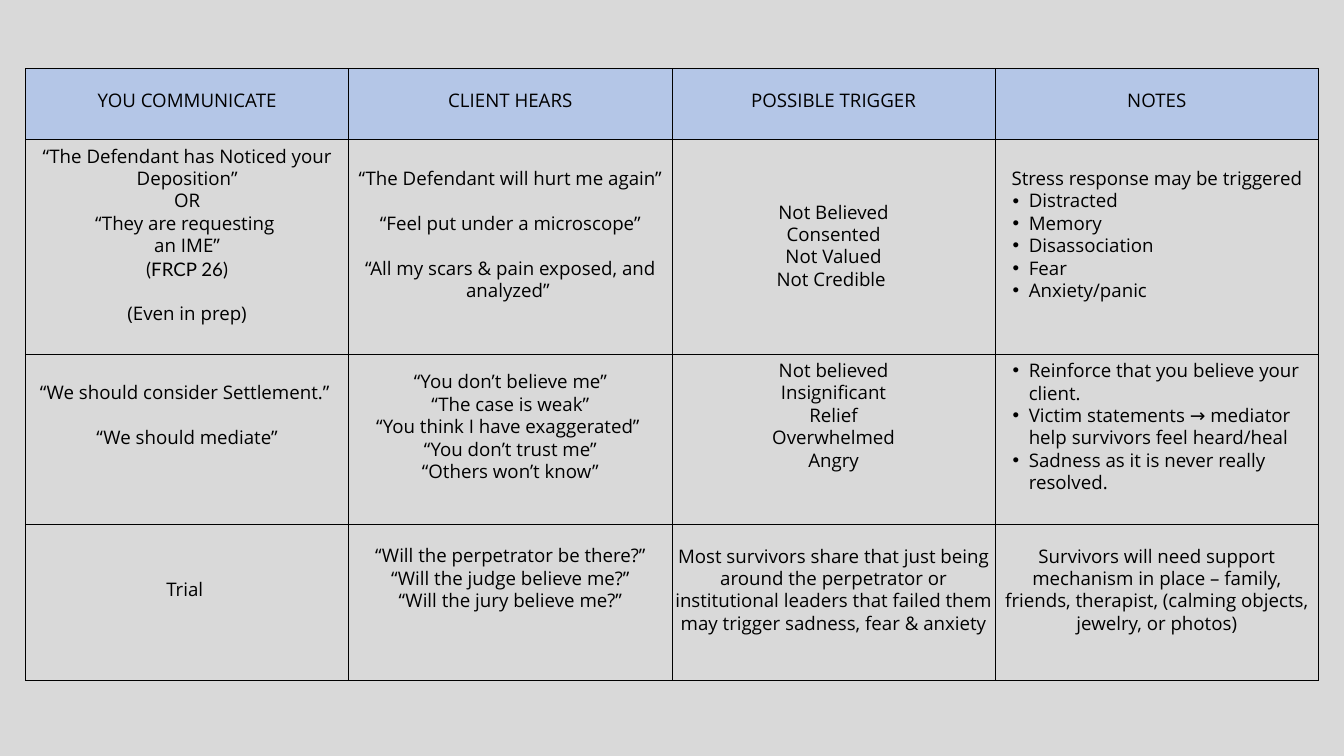
from typing import NamedTuple

from lxml.etree import SubElement
from pptx import Presentation
from pptx.dml.color import RGBColor
from pptx.enum.text import MSO_ANCHOR as Anchor, PP_ALIGN as Align
from pptx.oxml.ns import qn
from pptx.util import Inches, Pt

BLACK = RGBColor(0x00, 0x00, 0x00)
GREY = RGBColor(0xD9, 0xD9, 0xD9)
BLUE = RGBColor(0xB4, 0xC6, 0xE7)

COLUMN_WIDTH = 4.81
ROW_HEIGHTS = (1.06, 3.19, 2.53, 2.32)
INSET = 0.03
BODY_BOTTOM = 0.36
RAISED_BOTTOM = 0.7


class Line(NamedTuple):
    text: str
    gap: int = 0
    bullet: bool = False
    font: str = "Open Sans"


class Entry(NamedTuple):
    lines: list
    bottom: float = BODY_BOTTOM


def plain(*texts):
    return [Line(text) for text in texts]


def spaced(*texts):
    return [Line(text, gap=24 if index else 0) for index, text in enumerate(texts)]


def bullets(*texts):
    return [Line(text, bullet=True) for text in texts]


HEADINGS = ("YOU COMMUNICATE", "CLIENT HEARS", "POSSIBLE TRIGGER", "NOTES")

BODY = [
    [
        Entry(
            plain(
                "“The Defendant has Noticed your Deposition”",
                "OR",
                "“They are requesting ",
                "an IME”",
            )
            + [Line("(FRCP 26)", font="Lato"), Line("(Even in prep)", gap=24)]
        ),
        Entry(
            spaced(
                "“The Defendant will hurt me again”",
                "“Feel put under a microscope”",
                "“All my scars & pain exposed, and analyzed” ",
            )
        ),
        Entry(plain("Not Believed", "Consented", "Not Valued", "Not Credible "), INSET),
        Entry(
            plain("Stress response may be triggered")
            + bullets("Distracted", "Memory", "Disassociation", "Fear", "Anxiety/panic")
        ),
    ],
    [
        Entry(
            spaced("“We should consider Settlement.” ", "“We should mediate”"),
            RAISED_BOTTOM,
        ),
        Entry(
            plain(
                "“You don’t believe me”",
                "“The case is weak”",
                "“You think I have exaggerated” ",
                "“You don’t trust me”",
                "“Others won’t know”",
            )
        ),
        Entry(
            plain("Not believed", "Insignificant", "Relief", "Overwhelmed", "Angry"),
            RAISED_BOTTOM,
        ),
        Entry(
            bullets(
                "Reinforce that you believe your client.",
                "Victim statements → mediator help survivors feel heard/heal",
                "Sadness as it is never really resolved.",
            )
        ),
    ],
    [
        Entry(plain("Trial ")),
        Entry(
            plain(
                "“Will the perpetrator be there?”",
                "“Will the judge believe me?”",
                "“Will the jury believe me?”",
            ),
            RAISED_BOTTOM,
        ),
        Entry(
            plain(
                "Most survivors share that just being around the perpetrator or "
                "institutional leaders that failed them may trigger sadness, fear & anxiety"
            )
        ),
        Entry(
            plain(
                "Survivors will need support mechanism in place – family, friends, "
                "therapist, (calming objects, jewelry, or photos)"
            )
        ),
    ],
]


def add_bullet(para):
    para.level = 1
    properties = para._p.get_or_add_pPr()
    properties.set("marL", str(Inches(0.47)))
    properties.set("indent", str(Inches(-0.24)))
    SubElement(properties, qn("a:buFont"), typeface="Arial")
    SubElement(properties, qn("a:buChar"), char="•")


def write_text(para, text, font="Open Sans", size=20, leading=24, gap=0, bullet=False):
    if bullet:
        add_bullet(para)
    para.alignment = Align.LEFT if bullet else Align.CENTER
    para.line_spacing = Pt(leading)
    if gap:
        para.space_before = Pt(gap)
    span = para.add_run()
    span.text = text
    span.font.name = font
    span.font.size = Pt(size)
    span.font.color.rgb = BLACK


def add_borders(cell):
    properties = cell._tc.get_or_add_tcPr()
    for side in ("lnL", "lnR", "lnT", "lnB"):
        border = SubElement(properties, qn(f"a:{side}"), w=str(Pt(0.75)))
        fill = SubElement(border, qn("a:solidFill"))
        SubElement(fill, qn("a:srgbClr"), val=str(BLACK))


def fill_cell(cell, entry, color=None, leading=24):
    add_borders(cell)
    if color is None:
        cell.fill.background()
    else:
        cell.fill.solid()
        cell.fill.fore_color.rgb = color
    cell.vertical_anchor = Anchor.MIDDLE
    cell.margin_left = cell.margin_right = cell.margin_top = Inches(INSET)
    cell.margin_bottom = Inches(entry.bottom)
    frame = cell.text_frame
    for index, line in enumerate(entry.lines):
        para = frame.add_paragraph() if index else frame.paragraphs[0]
        write_text(para, leading=leading, **line._asdict())


def add_grid(page):
    columns = len(HEADINGS)
    table = page.shapes.add_table(
        len(ROW_HEIGHTS), columns, Inches(0.38), Inches(1.02),
        Inches(COLUMN_WIDTH * columns), Inches(sum(ROW_HEIGHTS)),
    ).table
    table.first_row = False
    table.horz_banding = False
    for column in table.columns:
        column.width = Inches(COLUMN_WIDTH)
    for row, height in zip(table.rows, ROW_HEIGHTS):
        row.height = Inches(height)
    return table


def main():
    deck = Presentation()
    deck.slide_width = Inches(20)
    deck.slide_height = Inches(11.25)
    page = deck.slides.add_slide(deck.slide_layouts[6])
    page.background.fill.solid()
    page.background.fill.fore_color.rgb = GREY

    table = add_grid(page)
    for column, heading in enumerate(HEADINGS):
        entry = Entry(plain(heading), 0.05)
        fill_cell(table.cell(0, column), entry, color=BLUE, leading=20)
    for row, entries in enumerate(BODY, start=1):
        for column, entry in enumerate(entries):
            fill_cell(table.cell(row, column), entry)
    deck.save("out.pptx")


if __name__ == "__main__":
    main()
